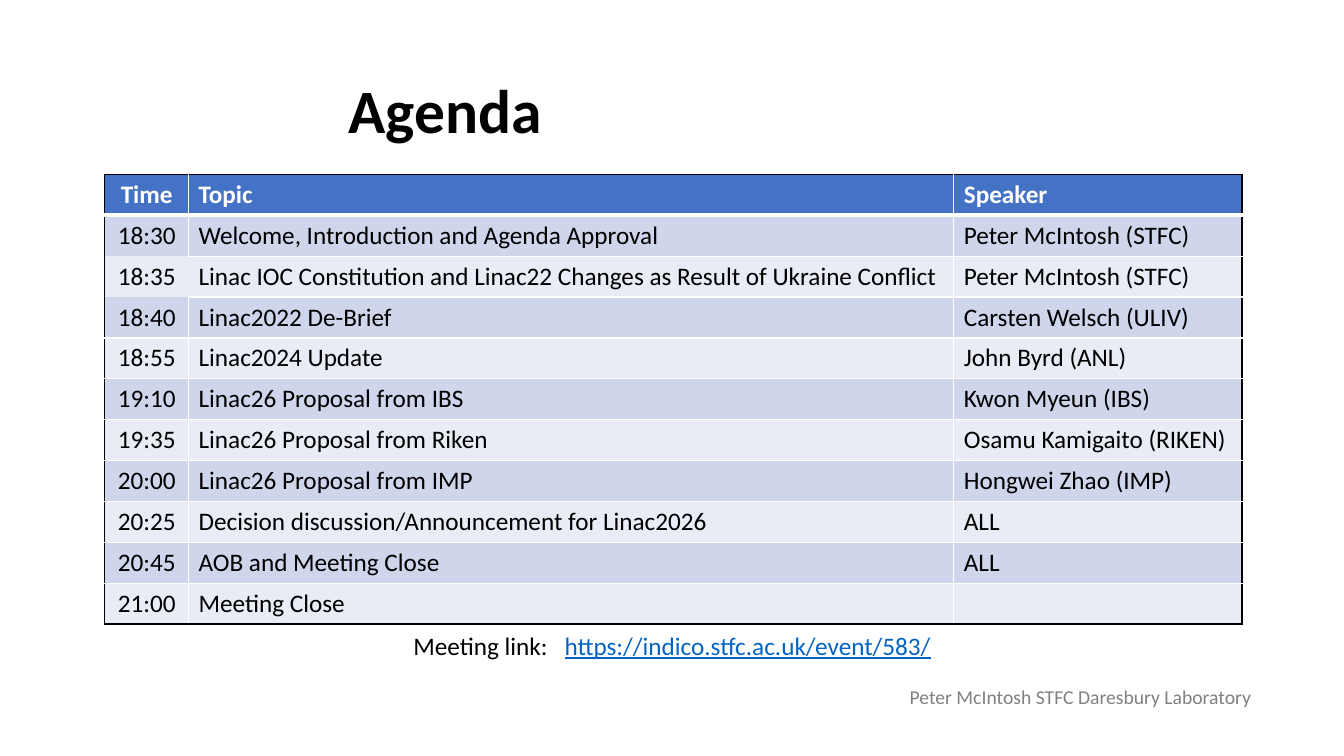
import lxml.etree
import pptx
import pptx.dml.color
import pptx.enum.text
import pptx.oxml.ns
import pptx.util

RGBColor = pptx.dml.color.RGBColor
ALIGN = pptx.enum.text.PP_ALIGN
ANCHOR = pptx.enum.text.MSO_ANCHOR

BLACK = RGBColor(0x00, 0x00, 0x00)
WHITE = RGBColor(0xFF, 0xFF, 0xFF)
GREY = RGBColor(0x80, 0x80, 0x80)
LINK_BLUE = RGBColor(0x05, 0x63, 0xC1)
HEADER_BLUE = RGBColor(0x44, 0x72, 0xC4)
BAND_DARK = RGBColor(0xCF, 0xD5, 0xEA)
BAND_LIGHT = RGBColor(0xE9, 0xEB, 0xF5)

FONT = "Calibri"
WIDTH = pptx.util.Inches(13.33)
HEIGHT = pptx.util.Inches(7.5)

COLUMN_SHARES = [6.23, 56.94, 21.45]
ROW_SHARE = 5.41
AGENDA = [
    ("Time", "Topic", "Speaker"),
    ("18:30", "Welcome, Introduction and Agenda Approval", "Peter McIntosh (STFC)"),
    ("18:35", "Linac IOC Constitution and Linac22 Changes as Result of Ukraine Conflict",
     "Peter McIntosh (STFC)"),
    ("18:40", "Linac2022 De-Brief", "Carsten Welsch (ULIV)"),
    ("18:55", "Linac2024 Update", "John Byrd (ANL)"),
    ("19:10", "Linac26 Proposal from IBS", "Kwon Myeun (IBS)"),
    ("19:35", "Linac26 Proposal from Riken", "Osamu Kamigaito (RIKEN)"),
    ("20:00", "Linac26 Proposal from IMP", "Hongwei Zhao (IMP)"),
    ("20:25", "Decision discussion/Announcement for Linac2026", "ALL"),
    ("20:45", "AOB and Meeting Close", "ALL"),
    ("21:00", "Meeting Close", ""),
]
OPEN_EDGES = {
    (1, 0): "B",
    (2, 0): "TRB",
    (2, 1): "L",
    (3, 0): "T",
}


def across(share):
    return round(WIDTH * share / 100)


def down(share):
    return round(HEIGHT * share / 100)


def add_run(p, text, size, color, bold=False, underline=False):
    r = p.add_run()
    r.text = text
    r.font.name = FONT
    r.font.size = pptx.util.Pt(size)
    r.font.color.rgb = color
    r.font.bold = bold
    r.font.underline = underline


def add_text(s, left, top, width, height, align, anchor=ANCHOR.TOP):
    sp = s.shapes.add_textbox(across(left), down(top), across(width), down(height))
    tf = sp.text_frame
    tf.word_wrap = True
    tf.vertical_anchor = anchor
    p = tf.paragraphs[0]
    p.alignment = align
    return p


def set_border(cell, side, color, width):
    qn = pptx.oxml.ns.qn
    props = cell._tc.get_or_add_tcPr()
    ln = lxml.etree.SubElement(props, qn(f"a:ln{side}"), w=str(pptx.util.Pt(width)))
    if color is None:
        lxml.etree.SubElement(ln, qn("a:noFill"))
    else:
        fill = lxml.etree.SubElement(ln, qn("a:solidFill"))
        lxml.etree.SubElement(fill, qn("a:srgbClr"), val=str(color))


def style_cell(cell, row, col):
    outer = {
        "L": col == 0,
        "R": col == len(COLUMN_SHARES) - 1,
        "T": row == 0,
        "B": row == len(AGENDA) - 1,
    }
    for side, is_outer in outer.items():
        color = BLACK if is_outer else WHITE
        if side in OPEN_EDGES.get((row, col), ""):
            color = None
        under_header = (row, side) in ((0, "B"), (1, "T"))
        set_border(cell, side, color, 3 if under_header else 1)
    cell.fill.solid()
    band = BAND_DARK if row % 2 else BAND_LIGHT
    cell.fill.fore_color.rgb = HEADER_BLUE if row == 0 else band


def add_agenda(s, left, top):
    table = s.shapes.add_table(
        len(AGENDA), len(COLUMN_SHARES), across(left), down(top),
        across(sum(COLUMN_SHARES)), down(ROW_SHARE * len(AGENDA))).table
    for column, share in zip(table.columns, COLUMN_SHARES):
        column.width = across(share)
    for i, entries in enumerate(AGENDA):
        table.rows[i].height = down(ROW_SHARE)
        for j, text in enumerate(entries):
            cell = table.cell(i, j)
            style_cell(cell, i, j)
            p = cell.text_frame.paragraphs[0]
            p.alignment = ALIGN.CENTER if j == 0 else ALIGN.LEFT
            if text:
                add_run(p, text, 18, WHITE if i == 0 else BLACK, bold=i == 0)


def main():
    prs = pptx.Presentation()
    prs.slide_width = WIDTH
    prs.slide_height = HEIGHT
    s = prs.slides.add_slide(prs.slide_layouts[6])

    p = add_text(s, 60, 90, 33.85, 4.53, ALIGN.RIGHT)
    add_run(p, "Peter McIntosh STFC Daresbury Laboratory", 14, GREY)

    p = add_text(s, 25.2, 5.33, 67.89, 19.33, ALIGN.LEFT, ANCHOR.MIDDLE)
    p.line_spacing = 0.9
    add_run(p, "Agenda", 44, BLACK, bold=True)

    add_agenda(s, 7.8, 23.07)

    p = add_text(s, 24.91, 82.67, 50.19, 5.33, ALIGN.CENTER)
    add_run(p, "Meeting link:\t", 18, BLACK)
    add_run(p, "https://indico.stfc.ac.uk/event/583/", 18, LINK_BLUE, underline=True)

    prs.save("out.pptx")


if __name__ == "__main__":
    main()
